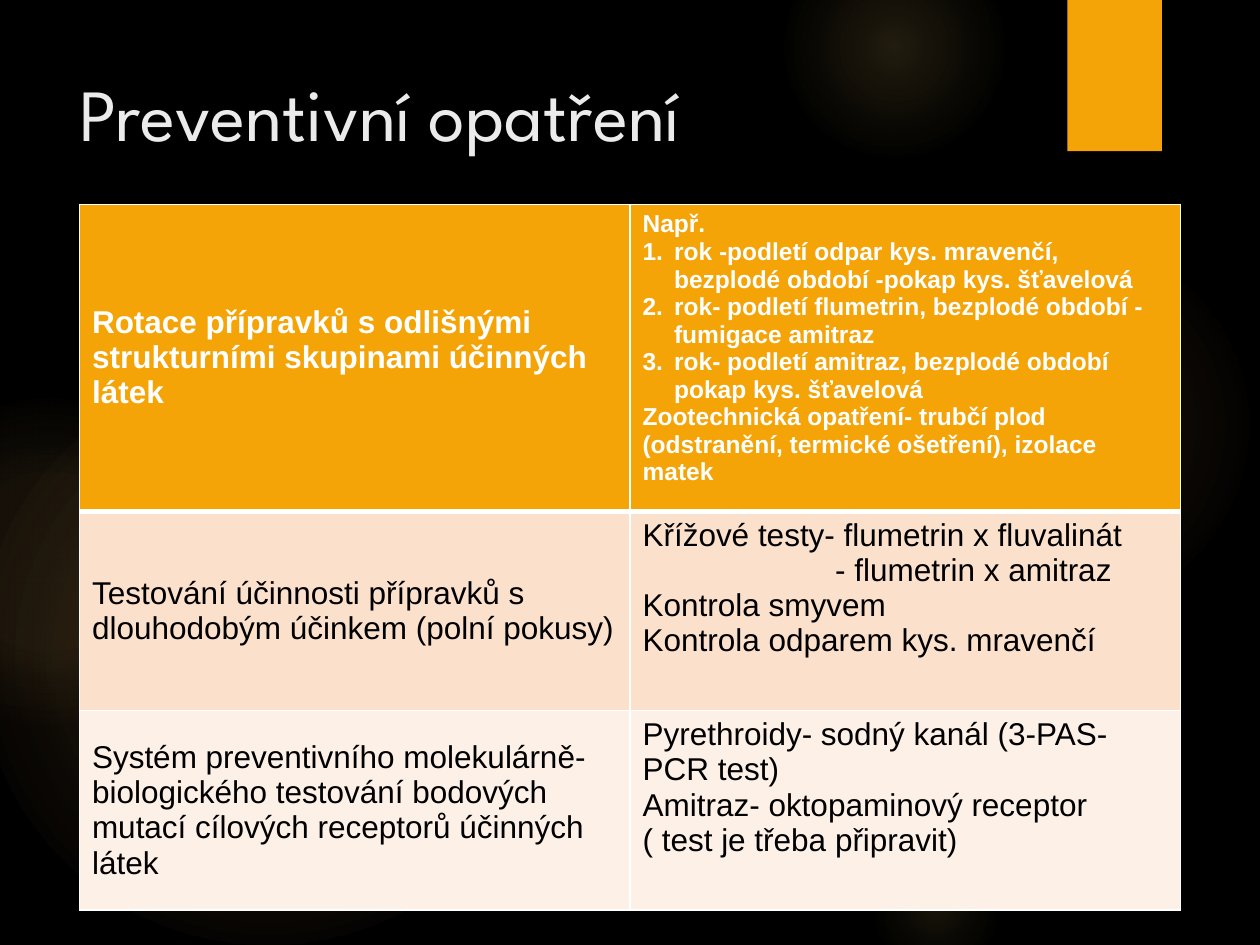
"""Build the slide on preventive measures with its table and glowing backdrop."""
from dataclasses import dataclass

import lxml.etree
import pptx
import pptx.dml.color
import pptx.enum.shapes
import pptx.enum.text
import pptx.oxml
import pptx.oxml.ns
import pptx.util

Pt = pptx.util.Pt


@dataclass(frozen=True)
class Theme:
    background: str = "000000"
    glow: str = "FAC96A"
    accent: str = "F5A408"
    title: str = "EBEBEB"
    white: str = "FFFFFF"
    black: str = "000000"
    band_dark: str = "FBE0CC"
    band_light: str = "FDF0E7"
    title_font: str = "League Spartan"
    body_font: str = "Arial"
    title_size: float = 42
    body_size: float = 18
    small_size: float = 14


@dataclass(frozen=True)
class Glow:
    left: float
    top: float
    diameter: float
    stops: tuple[tuple[int, int], ...]


@dataclass(frozen=True)
class Line:
    text: str
    numbered: bool = False
    indent: float = 0


@dataclass(frozen=True)
class Row:
    height: float
    fill: str
    color: str
    measure: str
    details: tuple[Line, ...]
    detail_size: float
    bold: bool = False
    bottom_border: float = 1


THEME = Theme()
GLOWS = (
    Glow(496, 132, 222, ((0, 7), (36, 6), (69, 0))),
    Glow(448, -36, 126, ((0, 14), (36, 7), (73, 0))),
    Glow(496, 480, 78, ((0, 10), (31, 5), (66, 0))),
    Glow(-12, 210, 330, ((0, 11), (36, 10), (75, 0))),
    Glow(-66, 228, 186, ((0, 8), (36, 8), (72, 0))),
)
ROWS = (
    Row(158.4, THEME.accent, THEME.white,
        "Rotace přípravků s odlišnými strukturními skupinami účinných látek",
        (Line("Např."),
         Line("rok -podletí odpar kys. mravenčí, bezplodé období -pokap kys. šťavelová", True, 18),
         Line("rok- podletí flumetrin, bezplodé období - fumigace amitraz", True, 18),
         Line("rok- podletí amitraz, bezplodé období pokap kys. šťavelová", True, 18),
         Line("Zootechnická opatření- trubčí plod (odstranění, termické ošetření), izolace matek")),
        THEME.small_size, True, 3),
    Row(114, THEME.band_dark, THEME.black,
        "Testování účinnosti přípravků s dlouhodobým účinkem (polní pokusy)",
        (Line("Křížové testy- flumetrin x fluvalinát"),
         Line("- flumetrin x amitraz", indent=110),
         Line("Kontrola smyvem"),
         Line("Kontrola odparem kys. mravenčí")),
        THEME.body_size),
    Row(114, THEME.band_light, THEME.black,
        "Systém preventivního molekulárně-biologického testování bodových mutací "
        "cílových receptorů účinných látek",
        (Line("Pyrethroidy- sodný kanál (3-PAS-PCR test)"),
         Line("Amitraz- oktopaminový receptor"),
         Line("( test je třeba připravit)")),
        THEME.body_size),
)


def rgb(color: str) -> pptx.dml.color.RGBColor:
    """Return the color object for a hexadecimal string."""
    return pptx.dml.color.RGBColor.from_string(color)


def add_element(parent, tag: str, **attributes):
    """Append a drawing element with the given attributes."""
    element = lxml.etree.SubElement(parent, pptx.oxml.ns.qn(f"a:{tag}"))
    for name, value in attributes.items():
        element.set(name, str(value))
    return element


def add_color(parent, color: str, opacity: int) -> None:
    """Append a partly transparent color."""
    element = add_element(parent, "srgbClr", val=color)
    add_element(element, "alpha", val=opacity * 1000)


def format_runs(paragraph, font: str, size: float, color: str, bold: bool = False) -> None:
    """Format every run of a paragraph."""
    for run in paragraph.runs:
        run.font.name = font
        run.font.size = Pt(size)
        run.font.bold = bold
        run.font.color.rgb = rgb(color)


def add_glow(slide, glow: Glow) -> None:
    """Draw a soft circle that fades outwards."""
    shape = slide.shapes.add_shape(
        pptx.enum.shapes.MSO_SHAPE.OVAL,
        Pt(glow.left), Pt(glow.top), Pt(glow.diameter), Pt(glow.diameter))
    shape.shadow.inherit = False
    shape.line.fill.background()
    shape.fill.background()
    properties = shape._element.spPr
    gradient = add_element(properties, "gradFill")
    stops = add_element(gradient, "gsLst")
    for position, opacity in glow.stops:
        add_color(add_element(stops, "gs", pos=position * 1000), THEME.glow, opacity)
    circle = add_element(gradient, "path", path="circle")
    add_element(circle, "fillToRect", l=50000, t=50000, r=50000, b=50000)
    properties.replace(properties.find(pptx.oxml.ns.qn("a:noFill")), gradient)


def add_ribbon(slide) -> None:
    """Draw the accent block that hangs from the top edge."""
    shape = slide.shapes.add_shape(
        pptx.enum.shapes.MSO_SHAPE.RECTANGLE, Pt(610), Pt(0), Pt(54), Pt(86.4))
    shape.shadow.inherit = False
    shape.fill.solid()
    shape.fill.fore_color.rgb = rgb(THEME.accent)
    shape.line.fill.background()
    effects = shape._element.spPr.find(pptx.oxml.ns.qn("a:effectLst"))
    shadow = add_element(effects, "outerShdw", blurRad=Pt(3), dist=Pt(2), dir=90 * 60000)
    add_color(shadow, THEME.black, 45)


def add_title(slide, text: str) -> None:
    """Write the slide title."""
    box = slide.shapes.add_textbox(Pt(38.2), Pt(35.3), Pt(556), Pt(110))
    frame = box.text_frame
    frame.word_wrap = True
    frame.vertical_anchor = pptx.enum.text.MSO_ANCHOR.TOP
    frame.text = text
    format_runs(frame.paragraphs[0], THEME.title_font, THEME.title_size, THEME.title)


def fill_cell(cell, row: Row, lines: tuple[Line, ...], size: float) -> None:
    """Write and style one table cell."""
    properties = cell._tc.get_or_add_tcPr()
    for side, width in (("L", 1), ("R", 1), ("T", 1), ("B", row.bottom_border)):
        border = add_element(properties, f"ln{side}", w=Pt(width))
        add_element(add_element(border, "solidFill"), "srgbClr", val=THEME.white)
    cell.fill.solid()
    cell.fill.fore_color.rgb = rgb(row.fill)
    frame = cell.text_frame
    frame.text = "\n".join(line.text for line in lines)
    for line, paragraph in zip(lines, frame.paragraphs):
        paragraph_properties = paragraph._p.get_or_add_pPr()
        if line.indent:
            paragraph_properties.set("marL", str(Pt(line.indent)))
        if line.numbered:
            paragraph_properties.set("indent", str(-Pt(line.indent)))
            add_element(paragraph_properties, "buFont", typeface="+mj-lt")
            add_element(paragraph_properties, "buAutoNum", type="arabicPeriod")
        format_runs(paragraph, THEME.body_font, size, row.color, row.bold)


def add_measures(slide, rows: tuple[Row, ...]) -> None:
    """Draw the table of measures and their details."""
    table = slide.shapes.add_table(
        len(rows), 2, Pt(45.4), Pt(116.8), Pt(629.2), Pt(sum(row.height for row in rows))).table
    table.first_row = table.horz_banding = False
    for index, row in enumerate(rows):
        table.rows[index].height = Pt(row.height)
        measure, details = table.cell(index, 0), table.cell(index, 1)
        fill_cell(measure, row, (Line(row.measure),), THEME.body_size)
        measure.vertical_anchor = pptx.enum.text.MSO_ANCHOR.MIDDLE
        fill_cell(details, row, row.details, row.detail_size)


def main() -> None:
    """Build and save the presentation."""
    presentation = pptx.Presentation()
    presentation.slide_width, presentation.slide_height = Pt(720), Pt(540)
    slide = presentation.slides.add_slide(presentation.slide_layouts[6])
    slide.background.fill.solid()
    slide.background.fill.fore_color.rgb = rgb(THEME.background)
    for glow in GLOWS:
        add_glow(slide, glow)
    add_ribbon(slide)
    add_title(slide, "Preventivní opatření")
    add_measures(slide, ROWS)
    presentation.save("out.pptx")


if __name__ == "__main__":
    main()
